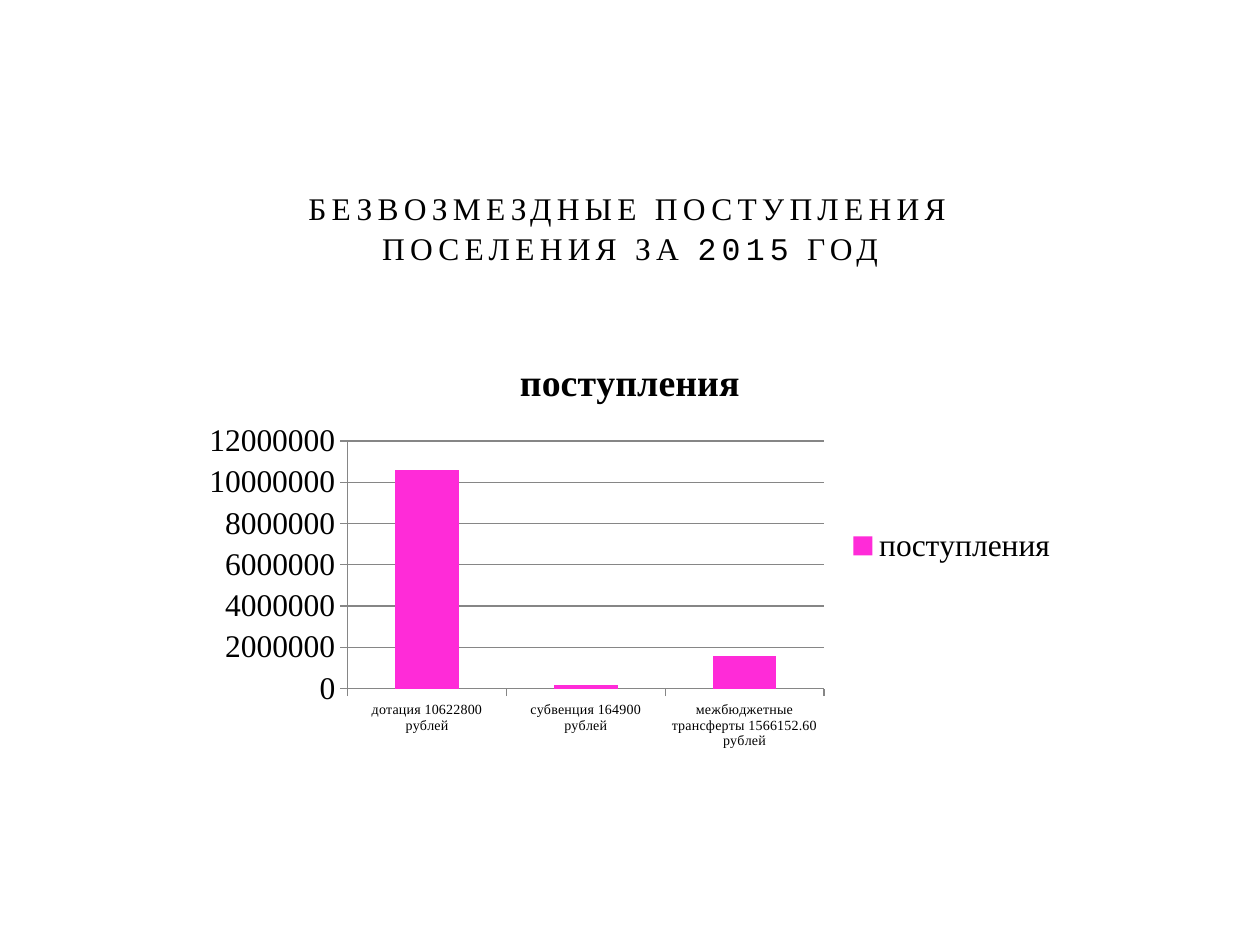
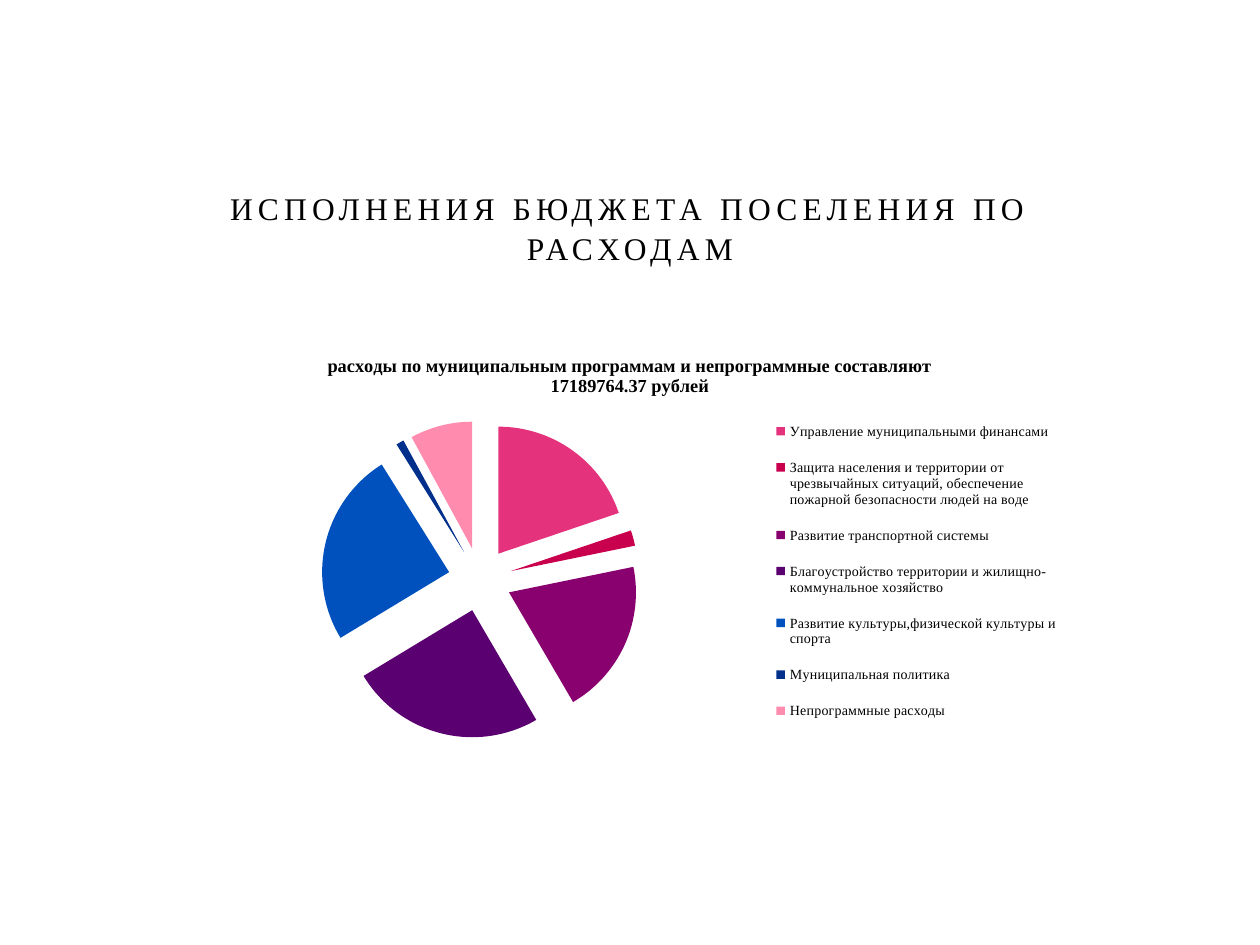
import pptx
import pptx.chart.data
import pptx.dml.color
import pptx.enum.chart
import pptx.enum.text
import pptx.oxml
import pptx.oxml.ns
import pptx.util

Pt = pptx.util.Pt
COLORS = {
    "background": "FFFFFF", "text": "000000", "axis": "868686", "income": "FF2BD8",
    "finance": "E4327C", "safety": "C9004E", "transport": "89006F", "housing": "5B0070",
    "culture": "0050BD", "policy": "00308C", "other": "FF8CAF",
}
SERIF = "Times New Roman"
TITLE_BOX = (108, 102, 504, 54)
CHART_BOX = (108, 192, 504, 240)
INCOME = {
    "дотация 10622800 рублей": 10600000,
    "субвенция 164900 рублей": 200000,
    "межбюджетные трансферты 1566152.60 рублей": 1600000,
}
EXPENSES = [
    ("Управление муниципальными финансами", 20, "finance"),
    ("Защита населения и территории от чрезвычайных ситуаций, "
     "обеспечение пожарной безопасности людей на воде", 2, "safety"),
    ("Развитие транспортной системы", 20, "transport"),
    ("Благоустройство территории и жилищно-коммунальное хозяйство", 25, "housing"),
    ("Развитие культуры,физической культуры и спорта", 25, "culture"),
    ("Муниципальная политика", 1, "policy"),
    ("Непрограммные расходы", 8, "other"),
]


def rgb(name):
    return pptx.dml.color.RGBColor.from_string(COLORS[name])


def style_font(font, size, bold=False, face=SERIF):
    font.name = face
    font.size = Pt(size)
    font.bold = bold
    font.color.rgb = rgb("text")


def paint(target, color):
    target.format.fill.solid()
    target.format.fill.fore_color.rgb = rgb(color)


def chart_element(tag, **attributes):
    element = pptx.oxml.parse_xml(f"<c:{tag} {pptx.oxml.ns.nsdecls('c')}/>")
    for name, value in attributes.items():
        element.set(name, str(value))
    return element


def set_layout(parent, index, box, inner=False):
    for old in parent.findall(pptx.oxml.ns.qn("c:layout")):
        parent.remove(old)
    layout = chart_element("layout")
    manual = chart_element("manualLayout")
    layout.append(manual)
    if inner:
        manual.append(chart_element("layoutTarget", val="inner"))
    for tag in ("xMode", "yMode"):
        manual.append(chart_element(tag, val="edge"))
    for tag, value in zip("xywh", box):
        manual.append(chart_element(tag, val=value))
    parent.insert(index, layout)


def add_page(deck, title_parts):
    page = deck.slides.add_slide(deck.slide_layouts[5])
    page.background.fill.solid()
    page.background.fill.fore_color.rgb = rgb("background")
    title = page.shapes.title
    title.left, title.top, title.width, title.height = map(Pt, TITLE_BOX)
    frame = title.text_frame
    frame.auto_size = pptx.enum.text.MSO_AUTO_SIZE.NONE
    frame.vertical_anchor = pptx.enum.text.MSO_ANCHOR.BOTTOM
    para = frame.paragraphs[0]
    para.alignment = pptx.enum.text.PP_ALIGN.CENTER
    para.line_spacing = 1.05
    for text, face in title_parts:
        span = para.add_run()
        span.text = text
        style_font(span.font, 18, face=face)
        span.font._element.set("spc", "300")
    return page


def add_chart(page, box, kind, name, values, title_size, legend_size, plot_box):
    data = pptx.chart.data.CategoryChartData()
    data.categories = list(values)
    data.add_series(name, list(values.values()))
    chart = page.shapes.add_chart(kind, *map(Pt, box), data).chart
    style_font(chart.font, 18)
    chart.has_title = True
    chart.chart_title.include_in_layout = False
    chart.chart_title.text_frame.text = name
    style_font(chart.chart_title.text_frame.paragraphs[0].runs[0].font, title_size, True)
    chart.has_legend = True
    chart.legend.position = pptx.enum.chart.XL_LEGEND_POSITION.RIGHT
    chart.legend.include_in_layout = False
    style_font(chart.legend.font, legend_size)
    plot_area = chart._chartSpace.find(".//" + pptx.oxml.ns.qn("c:plotArea"))
    set_layout(plot_area, 0, plot_box, inner=True)
    return chart


def add_income_chart(page, box):
    chart = add_chart(page, box, pptx.enum.chart.XL_CHART_TYPE.COLUMN_CLUSTERED,
                      "поступления", INCOME, 21.6, 18, (0.18, 0.25, 0.54, 0.59))
    plot = chart.plots[0]
    plot.vary_by_categories = False
    plot.gap_width = 150
    paint(plot.series[0], "income")
    chart.value_axis.has_major_gridlines = True
    for axis, size in ((chart.category_axis, 8), (chart.value_axis, 18)):
        style_font(axis.tick_labels.font, size)
        axis.major_tick_mark = pptx.enum.chart.XL_TICK_MARK.OUTSIDE
        axis.format.line.color.rgb = rgb("axis")
    chart.value_axis.major_gridlines.format.line.color.rgb = rgb("axis")


def add_expense_chart(page, box):
    values = {label: value for label, value, color in EXPENSES}
    chart = add_chart(page, box, pptx.enum.chart.XL_CHART_TYPE.PIE,
                      "расходы по муниципальным программам и непрограммные "
                      "составляют 17189764.37 рублей",
                      values, 10.5, 8, (0.15, 0.2, 0.36, 0.76))
    set_layout(chart.legend._element, 1, (0.66, 0.16, 0.33, 0.8))
    plot = chart.plots[0]
    plot.vary_by_categories = True
    series = plot.series[0]
    series.format.line.fill.background()
    properties = series._element.find(pptx.oxml.ns.qn("c:spPr"))
    properties.addnext(chart_element("explosion", val=25))
    for index, (label, value, color) in enumerate(EXPENSES):
        paint(series.points[index], color)


def main():
    deck = pptx.Presentation()
    deck.slide_width, deck.slide_height = Pt(720), Pt(540)
    income_page = add_page(deck, [
        ("БЕЗВОЗМЕЗДНЫЕ ПОСТУПЛЕНИЯ ПОСЕЛЕНИЯ ЗА ", SERIF),
        ("2015", "Courier New"),
        (" ГОД", SERIF),
    ])
    add_income_chart(income_page, CHART_BOX)
    expense_page = add_page(deck, [("ИСПОЛНЕНИЯ БЮДЖЕТА ПОСЕЛЕНИЯ ПО РАСХОДАМ", SERIF)])
    add_expense_chart(expense_page, CHART_BOX)
    deck.save("out.pptx")


if __name__ == "__main__":
    main()
